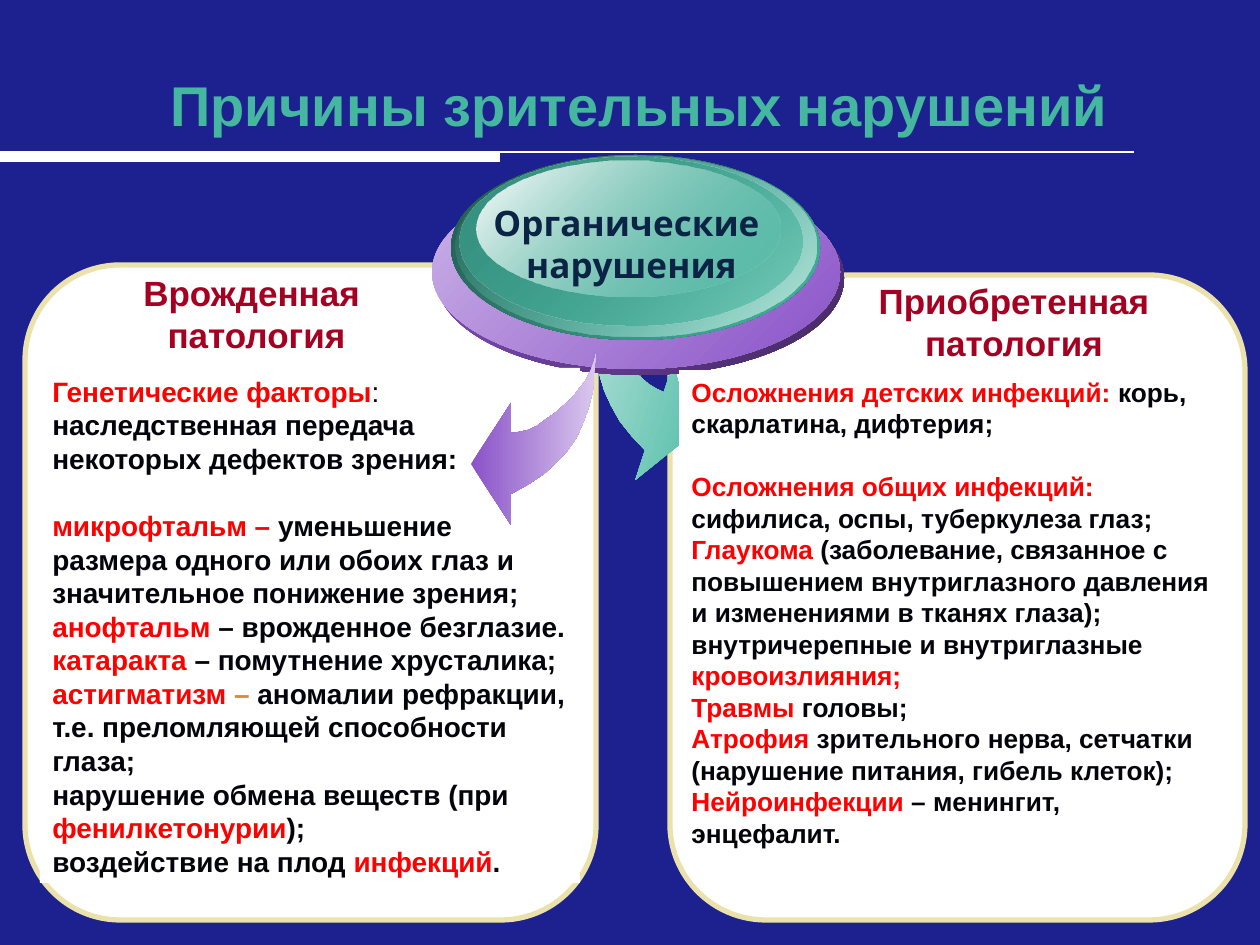
import pptx
import pptx.util
import pptx.dml.color
import pptx.enum.shapes
import pptx.enum.text
import pptx.oxml.ns
import pptx.oxml.xmlchemy

PX = 914400 / 126
THEME = {
    "background": "1D208F", "white": "FFFFFF", "title": "45B7A1",
    "border": "EAE2AA", "heading": "A50021", "term": "FF0000",
    "body": "04040C", "dash": "DD8739", "hub": "0B2445",
    "font": "Arial", "hub font": "Quicksand",
    "title size": 32, "heading size": 20, "left size": 16, "right size": 15,
    "leading": 1.2,
}

TITLE = "Причины зрительных нарушений"
RULES = [(152, 1134, 1.5), (157, 500, 6)]
PANELS = [(670, 275, 575, 645), (25, 265, 571, 655)]
HEADINGS = [
    ((40, 265, 433, 97), ["Врожденная ", "патология"], "heading", "font"),
    ((803, 273, 422, 97), ["Приобретенная патология"], "heading", "font"),
]
HUB = ((460, 195, 343, 97), ["Органические ", "нарушения"], "hub", "hub font")
GAP = "gap"
LEFT_CAUSES = [
    [("Генетические факторы", "term"), (":", "body", False)],
    [("наследственная передача", "body")],
    [("некоторых дефектов зрения:", "body")],
    GAP,
    [("микрофтальм – ", "term"),
     ("уменьшение размера одного или обоих глаз и значительное понижение зрения;", "body")],
    [("анофтальм ", "term"), ("– врожденное безглазие.", "body")],
    [("катаракта ", "term"), ("– помутнение хрусталика;", "body")],
    [("астигматизм", "term"), (" – ", "dash"),
     ("аномалии рефракции, т.е. преломляющей способности глаза;", "body")],
    [("нарушение обмена веществ (при ", "body"), ("фенилкетонурии", "term"), (");", "body")],
    [("воздействие на плод ", "body"), ("инфекций", "term"), (".", "body")],
]
RIGHT_CAUSES = [
    [("Осложнения детских инфекций:", "term"), (" корь, скарлатина, дифтерия;", "body")],
    GAP,
    [("Осложнения общих инфекций:", "term")],
    [("сифилиса, оспы, туберкулеза глаз;", "body")],
    [("Глаукома ", "term"),
     ("(заболевание, связанное с повышением внутриглазного давления и изменениями в тканях глаза);", "body")],
    [("внутричерепные и внутриглазные", "body")],
    [("кровоизлияния;", "term")],
    [("Травмы ", "term"), ("головы;", "body")],
    [("Атрофия ", "term"),
     ("зрительного нерва, сетчатки (нарушение питания, гибель клеток);", "body")],
    [("Нейроинфекции ", "term"), ("– менингит, энцефалит.", "body")],
]
CAUSES = [
    ((40, 368, 540, 515), LEFT_CAUSES, "left size"),
    ((679, 370, 546, 484), RIGHT_CAUSES, "right size"),
]
ELLIPSES = [
    ((436, 181, 408, 194), ("8A52C8", 100), ("432861", 100)),
    ((432, 175, 408, 194), ("CBB2E7", 100), ("8A52C8", 100)),
    ((451, 155, 369, 185), ("20554B", 100), ("45B7A1", 100)),
    ((456, 156, 360, 180), ("45B7A1", 0), ("BEE6DE", 100)),
    ((460, 157, 343, 169), ("379180", 100), ("45B7A1", 48)),
    ((477, 161, 303, 136), ("FFFFFF", 100), ("45B7A1", 38)),
]
ARROW_WIDTH = 125
ARROW = [
    (125, 0), (123, 19), (122, 37), (118, 53), (112, 69), (106, 83), (97, 96),
    (86, 108), (73, 120), (58, 130), (40, 140), (40, 171), (0, 110), (40, 49),
    (40, 79), (48, 78), (57, 76), (66, 72), (74, 66), (84, 59), (92, 52),
    (101, 44), (108, 35), (115, 26), (120, 16), (123, 8),
]


def px(*lengths):
    return [round(length * PX) for length in lengths]


def color(name):
    return pptx.dml.color.RGBColor.from_string(THEME.get(name, name))


def fill_gradient(shape, start, end, angle):
    shape.shadow.inherit = False
    shape.line.fill.background()
    shape.fill.gradient()
    shape.fill.gradient_angle = angle
    for stop, (tone, _) in zip(shape.fill.gradient_stops, (start, end)):
        stop.color.rgb = color(tone)
    tones = list(shape._element.spPr.iter(pptx.oxml.ns.qn("a:srgbClr")))
    for tone, (_, opacity) in zip(tones, (start, end)):
        if opacity < 100:
            alpha = pptx.oxml.xmlchemy.OxmlElement("a:alpha")
            alpha.set("val", str(opacity * 1000))
            tone.append(alpha)


def add_text(slide, box, paragraphs, size, font="font", centered=False):
    textbox = slide.shapes.add_textbox(*px(*box))
    frame = textbox.text_frame
    frame.word_wrap = True
    leading = pptx.util.Pt(THEME[size] * THEME["leading"])
    gap = pptx.util.Pt(0)
    paragraph = frame.paragraphs[0]
    for index, runs in enumerate(paragraphs):
        if runs == GAP:
            gap = leading
            continue
        if index:
            paragraph = frame.add_paragraph()
        paragraph.space_before = gap
        gap = pptx.util.Pt(0)
        paragraph.line_spacing = leading
        paragraph.font.name = THEME[font]
        paragraph.font.size = pptx.util.Pt(THEME[size])
        paragraph.font.bold = True
        if centered:
            paragraph.alignment = pptx.enum.text.PP_ALIGN.CENTER
        for words, tone, *bold in runs:
            run = paragraph.add_run()
            run.text = words
            run.font.color.rgb = color(tone)
            if bold:
                run.font.bold = bold[0]
    return textbox


def add_heading(slide, box, lines, tone, font):
    add_text(slide, box, [[(line, tone)] for line in lines], "heading size", font, True)


def add_arrow(slide, left, top, tones, mirrored=False):
    points = [(left + (ARROW_WIDTH - x if mirrored else x), top + y) for x, y in ARROW]
    builder = slide.shapes.build_freeform(*points[0], scale=PX)
    builder.add_line_segments(points[1:], close=True)
    arrow = builder.convert_to_shape()
    fill_gradient(arrow, *tones, 180 if mirrored else 0)
    arrow.rotation = 18 if mirrored else 0


def main():
    deck = pptx.Presentation()
    deck.slide_width, deck.slide_height = px(1260, 945)
    slide = deck.slides.add_slide(deck.slide_layouts[6])
    slide.background.fill.solid()
    slide.background.fill.fore_color.rgb = color("background")
    shapes = pptx.enum.shapes.MSO_SHAPE

    for y, length, width in RULES:
        rule = slide.shapes.add_connector(
            pptx.enum.shapes.MSO_CONNECTOR.STRAIGHT, *px(0, y, length, y))
        rule.line.color.rgb = color("white")
        rule.line.width = pptx.util.Pt(width)
        rule._element.spPr.append(pptx.oxml.xmlchemy.OxmlElement("a:effectLst"))

    title = add_text(slide, (53, 73, 1173, 63), [[(TITLE, "title")]], "title size", centered=True)
    title.text_frame.vertical_anchor = pptx.enum.text.MSO_ANCHOR.MIDDLE

    for box in PANELS:
        panel = slide.shapes.add_shape(shapes.ROUNDED_RECTANGLE, *px(*box))
        panel.shadow.inherit = False
        panel.fill.solid()
        panel.fill.fore_color.rgb = color("white")
        panel.line.color.rgb = color("border")
        panel.line.width = pptx.util.Pt(3)

    add_arrow(slide, 578, 306, (("45B7A1", 100), ("C4E8E1", 100)), mirrored=True)
    for box, start, end in ELLIPSES:
        ellipse = slide.shapes.add_shape(shapes.OVAL, *px(*box))
        fill_gradient(ellipse, start, end, 315)

    for heading in HEADINGS:
        add_heading(slide, *heading)
    for box, causes, size in CAUSES:
        block = add_text(slide, box, causes, size)
        block.fill.solid()
        block.fill.fore_color.rgb = color("white")
    add_heading(slide, *HUB)
    add_arrow(slide, 471, 354, (("8A52C8", 100), ("DAC8EE", 100)))

    deck.save("out.pptx")


if __name__ == "__main__":
    main()
